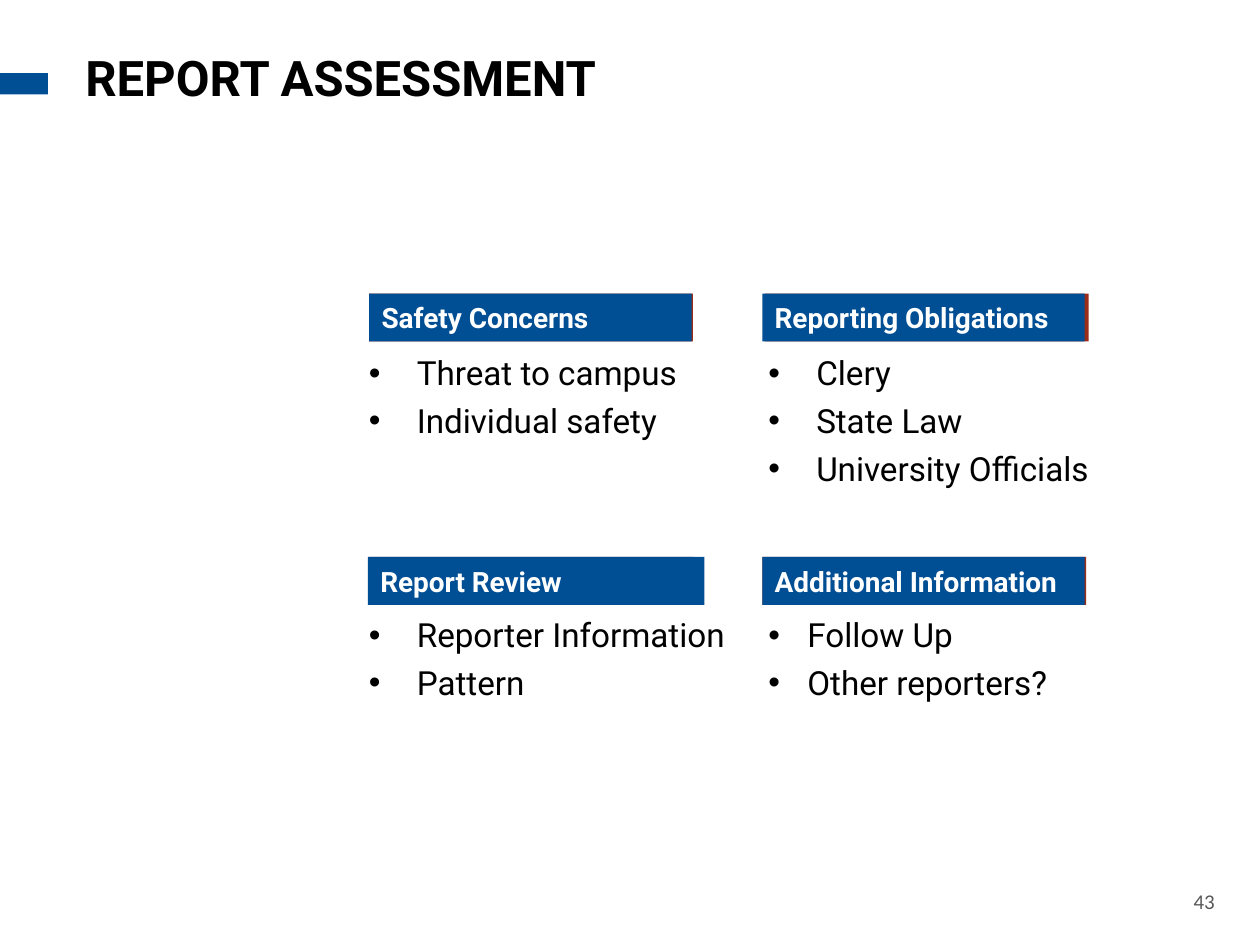
from lxml import etree
from pptx import Presentation
from pptx.dml.color import RGBColor
from pptx.enum.shapes import MSO_SHAPE
from pptx.enum.text import MSO_ANCHOR, PP_ALIGN
from pptx.oxml.ns import qn
from pptx.util import Inches, Pt

RECTANGLE = MSO_SHAPE.RECTANGLE
TOP, MIDDLE = MSO_ANCHOR.TOP, MSO_ANCHOR.MIDDLE
LEFT, RIGHT = PP_ALIGN.LEFT, PP_ALIGN.RIGHT
COLORS = {"blue": "004E93", "red": "9A2C1A", "white": "FFFFFF",
          "black": "000000", "gray": "595959"}
BAR_HEIGHT = 0.38
LIST_HEIGHT = 1.33

TOPICS = [
    {"heading": "Safety Concerns", "items": ["Threat to campus", "Individual safety"],
     "bar": (2.93, 2.33, 2.56), "back": 2.93, "list": (2.83, 2.75, 2.75), "indent": 0.38},
    {"heading": "Reporting Obligations", "items": ["Clery", "State Law", "University Officials"],
     "bar": (6.05, 2.33, 2.56), "back": 6.07, "list": (6, 2.75, 2.92), "indent": 0.38},
    {"heading": "Report Review", "items": ["Reporter Information", "Pattern"],
     "bar": (2.92, 4.42, 2.67), "back": 2.93, "list": (2.83, 4.83, 3.08), "indent": 0.38},
    {"heading": "Additional Information", "items": ["Follow Up", "Other reporters?"],
     "bar": (6.05, 4.42, 2.56), "back": 6.05, "list": (6, 4.83, 2.75), "indent": 0.31},
]


def add_bar(page, left, top, width, height, color):
    bar = page.shapes.add_shape(RECTANGLE, Inches(left), Inches(top), Inches(width), Inches(height))
    bar.shadow.inherit = False
    bar.fill.solid()
    bar.fill.fore_color.rgb = RGBColor.from_string(COLORS[color])
    bar.line.fill.background()
    return bar


def add_text_box(page, left, top, width, height):
    return page.shapes.add_textbox(Inches(left), Inches(top), Inches(width), Inches(height))


def add_bullet(para, indent):
    properties = para._p.get_or_add_pPr()
    properties.set("marL", str(Inches(indent)))
    properties.set("indent", str(-Inches(indent)))
    etree.SubElement(properties, qn("a:buFont")).set("typeface", "Arial")
    etree.SubElement(properties, qn("a:buChar")).set("char", "•")


def write_text(box, lines, size, color, bold=False, font="Roboto", anchor=TOP, align=LEFT, indent=None):
    frame = box.text_frame
    frame.word_wrap = True
    frame.vertical_anchor = anchor
    for index, line in enumerate(lines):
        para = frame.add_paragraph() if index else frame.paragraphs[0]
        para.alignment = align
        if index:
            para.space_before = Pt(4.4)
        if indent:
            add_bullet(para, indent)
        span = para.add_run()
        span.text = line
        span.font.name = font
        span.font.size = Pt(size)
        span.font.bold = bold
        span.font.color.rgb = RGBColor.from_string(COLORS[color])


def add_title(page, left, top, width, height):
    add_bar(page, -0.01, 0.58, 0.39, 0.17, "blue")
    box = add_text_box(page, left, top, width, height)
    write_text(box, ["REPORT ASSESSMENT"], 28, "black", bold=True)


def add_topic(page, topic):
    left, top, width = topic["bar"]
    add_bar(page, topic["back"], top, 2.57, BAR_HEIGHT, "red")
    heading = add_bar(page, left, top, width, BAR_HEIGHT, "blue")
    write_text(heading, [topic["heading"]], 16, "white", bold=True, anchor=MIDDLE)
    items = add_text_box(page, *topic["list"], LIST_HEIGHT)
    write_text(items, topic["items"], 19, "black", indent=topic["indent"])


def add_page_number(page, left, top, width, height):
    box = add_text_box(page, left, top, width, height)
    write_text(box, ["43"], 12, "gray", font="Calibri", anchor=MIDDLE, align=RIGHT)


def main():
    deck = Presentation()
    deck.slide_width, deck.slide_height = Inches(10), Inches(7.5)
    page = deck.slides.add_slide(deck.slide_layouts[6])
    add_title(page, 0.58, 0.33, 4.42, 1)
    for topic in TOPICS:
        add_topic(page, topic)
    add_page_number(page, 9.26, 7, 0.48, 0.3)
    deck.save("out.pptx")


if __name__ == "__main__":
    main()
